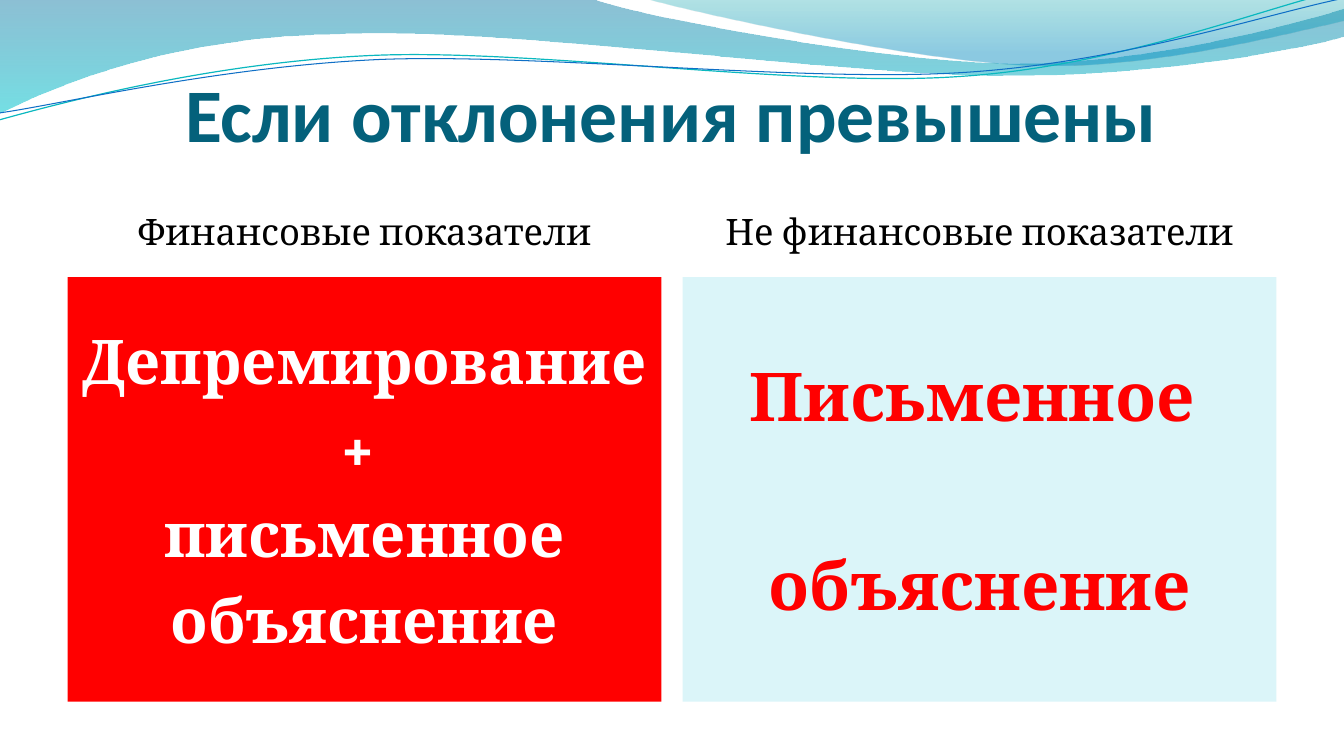
from pptx import Presentation
from pptx.dml.color import RGBColor
from pptx.enum.shapes import MSO_SHAPE
from pptx.enum.text import MSO_ANCHOR, PP_ALIGN
from pptx.oxml.ns import qn
from pptx.util import Inches, Pt
from lxml import etree

RECT = MSO_SHAPE.RECTANGLE
TOP, MIDDLE = MSO_ANCHOR.TOP, MSO_ANCHOR.MIDDLE
CENTER = PP_ALIGN.CENTER

BLACK = RGBColor(0x00, 0x00, 0x00)
WHITE = RGBColor(0xFF, 0xFF, 0xFF)
RED = RGBColor(0xFF, 0x00, 0x00)
PALE = RGBColor(0xDB, 0xF5, 0xF9)
NAVY = RGBColor(0x04, 0x61, 0x7B)
BLUE = RGBColor(0x0F, 0x6F, 0xC6)
TEAL = RGBColor(0x0A, 0xB8, 0xBF)

# Gradient stops: position, colour, opacity in percent
BROAD = [(0, RGBColor(0x00, 0x74, 0xA1), 45),
         (1, RGBColor(0x00, 0xC6, 0xCF), 55)]
SLIM = [(0, RGBColor(0x00, 0xA1, 0xA9), 30),
        (0.8, RGBColor(0x00, 0x8B, 0xBF), 45)]

# Outlines: a pair is a straight step, six numbers are a Bezier curve
BROAD_PATH = [(0, 0), (5.87, -0.01),
              (6.34, 0.17, 8.85, 0.63, 10.11, 0.63),
              (11.38, 0.63, 12.78, 0.26, 13.33, 0.09), (13.35, 0.36),
              (13.11, 0.44, 11.6, 0.76, 9.94, 0.75),
              (8.29, 0.75, 5.09, 0.28, 3.43, 0.34),
              (1.72, 0.36, 0.61, 0.83, -0.01, 1.13)]
SLIM_PATH = [(6.39, -0.01), (6.79, 0.11, 9.09, 0.62, 10.25, 0.65),
             (11.41, 0.69, 12.82, 0.32, 13.33, 0.21), (13.33, 0)]
TEAL_PATH = [(-0.01, 1.19), (0.64, 1.01, 2.11, 0.62, 3.69, 0.55),
             (5.27, 0.48, 7.9, 0.87, 9.5, 0.76),
             (11.1, 0.66, 12.52, 0.08, 13.31, -0.1)]
BLUE_PATH = [(0, 1.12), (0.63, 1.03, 2.18, 0.66, 3.78, 0.59),
             (5.37, 0.53, 7.96, 0.82, 9.55, 0.72),
             (11.15, 0.62, 12.55, 0.14, 13.34, -0.02)]

TITLE = dict(name="Calibri", size=Pt(54), bold=True)
HEAD = dict(name="Cambria", size=Pt(26), bold=False)
LEFT = dict(name="Cambria", size=Pt(44), bold=True)
RIGHT = dict(name="Cambria", size=Pt(48), bold=True)

# Columns: left edge, heading, lines, format, text colour, fill, line gap
COLS = [
    (0.67, "Финансовые показатели",
     ["Депремирование", "+ ", "письменное", "объяснение"],
     LEFT, WHITE, RED, Pt(8.8)),
    (6.77, "Не финансовые показатели",
     ["Письменное ", "объяснение"], RIGHT, RED, PALE, Pt(77.5)),
]
WIDTH = 5.89


def bend(shape, path):
    """Turn the straight steps that stand for curves into Bezier curves."""
    steps = list(shape.element.spPr.iter(qn("a:lnTo")))
    for line, step in zip(steps, path[1:]):
        if len(step) == 2:
            continue
        curve = etree.Element(qn("a:cubicBezTo"))
        for x, y in zip(step[::2], step[1::2]):
            etree.SubElement(curve, qn("a:pt"),
                             x=str(Inches(x) - shape.left),
                             y=str(Inches(y) - shape.top))
        line.getparent().replace(line, curve)


def add_path(slide, path, close):
    ends = [(Inches(step[-2]), Inches(step[-1])) for step in path]
    form = slide.shapes.build_freeform(*ends[0])
    form.add_line_segments(ends[1:], close=close)
    shape = form.convert_to_shape()
    shape.shadow.inherit = False
    bend(shape, path)
    return shape


def add_wave(slide, path, stops):
    wave = add_path(slide, path, True)
    wave.line.fill.background()
    wave.fill.gradient()
    wave.fill.gradient_angle = 270
    for stop, (pos, color, _) in zip(wave.fill.gradient_stops, stops):
        stop.position = pos
        stop.color.rgb = color
    marks = wave.element.spPr.iter(qn("a:srgbClr"))
    for mark, (_, _, alpha) in zip(marks, stops):
        etree.SubElement(mark, qn("a:alpha"), val=str(alpha * 1000))


def add_curve(slide, path, color, width):
    curve = add_path(slide, path, False)
    curve.fill.background()
    curve.line.color.rgb = color
    curve.line.width = Pt(width)


def set_text(shape, lines, style, color, anchor, gap=Pt(0)):
    frame = shape.text_frame
    frame.word_wrap = True
    frame.vertical_anchor = anchor
    for i, line in enumerate(lines):
        para = frame.add_paragraph() if i else frame.paragraphs[0]
        para.text = line
        para.alignment = CENTER
        para.space_before = gap if i else Pt(0)
        for key, value in style.items():
            setattr(para.font, key, value)
        para.font.color.rgb = color


def add_col(slide, left, head, lines, style, color, fill, gap):
    x, wide = Inches(left), Inches(WIDTH)
    label = slide.shapes.add_textbox(x, Inches(2.03), wide, Inches(0.72))
    set_text(label, [head], HEAD, BLACK, TOP)
    panel = slide.shapes.add_shape(RECT, x, Inches(2.75), wide, Inches(4.21))
    panel.shadow.inherit = False
    panel.fill.solid()
    panel.fill.fore_color.rgb = fill
    panel.line.fill.background()
    set_text(panel, lines, style, color, MIDDLE, gap)


def main():
    deck = Presentation()
    deck.slide_width, deck.slide_height = Inches(13.33), Inches(7.5)
    slide = deck.slides.add_slide(deck.slide_layouts[5])

    # Waves along the top edge
    add_wave(slide, BROAD_PATH, BROAD)
    add_wave(slide, SLIM_PATH, SLIM)
    add_curve(slide, TEAL_PATH, TEAL, 0.85)
    add_curve(slide, BLUE_PATH, BLUE, 0.75)

    # Title
    title = slide.shapes.title
    title.left, title.top = Inches(0.66), Inches(0.61)
    title.width, title.height = Inches(12), Inches(1.25)
    set_text(title, ["Если отклонения превышены"], TITLE, NAVY, TOP)

    # Two columns
    for col in COLS:
        add_col(slide, *col)

    deck.save("out.pptx")


if __name__ == "__main__":
    main()
